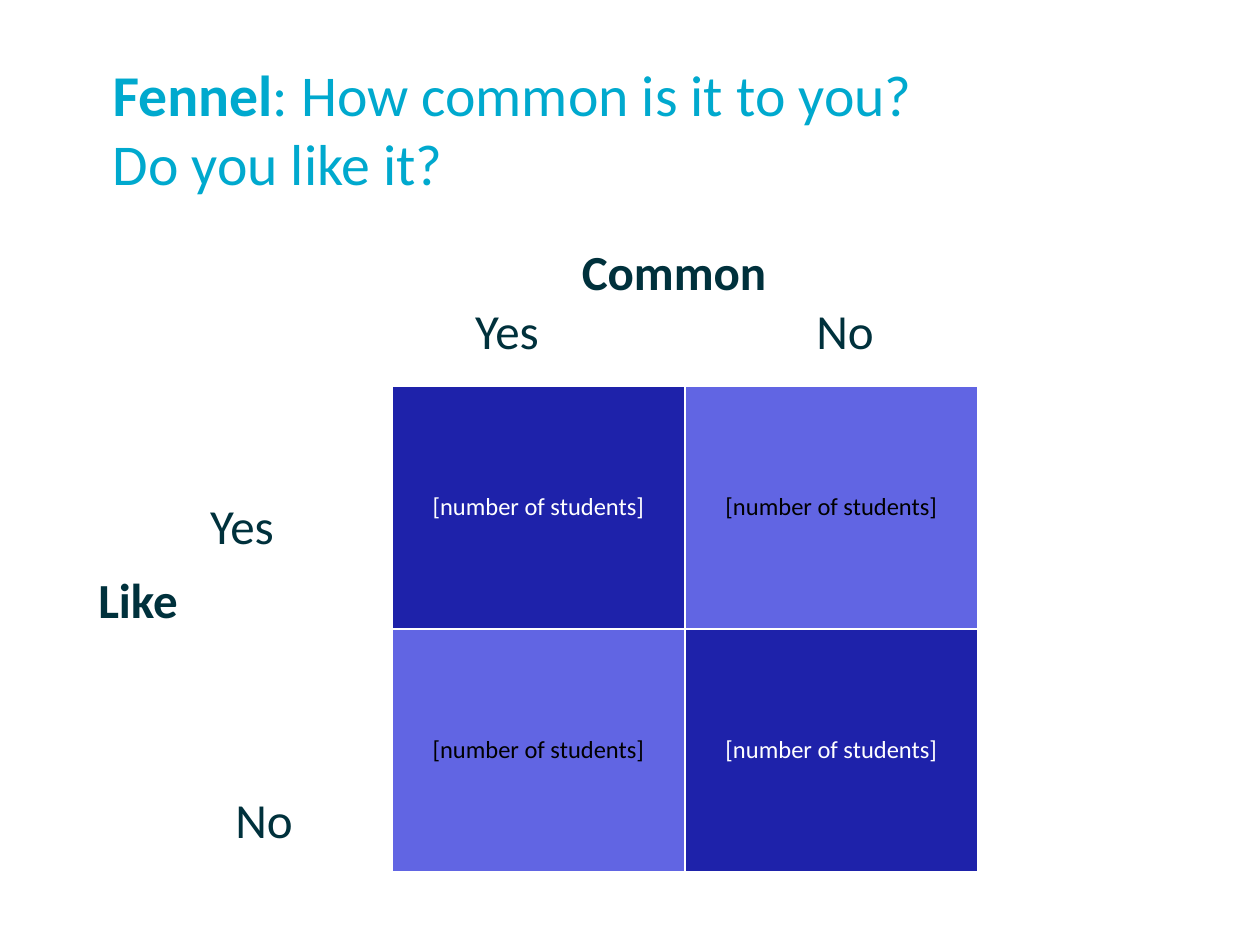
import dataclasses

import pptx
import pptx.dml.color
import pptx.enum.text
import pptx.oxml.ns
import pptx.util
from lxml import etree

EMU_PER_PX = 914400 / 126
ALIGN = pptx.enum.text.PP_ALIGN
ANCHOR = pptx.enum.text.MSO_ANCHOR


@dataclasses.dataclass(frozen=True)
class Theme:
    font: str = "Calibri"
    title_color: str = "00A9CE"
    label_color: str = "00313C"
    dark_fill: str = "1E22AA"
    light_fill: str = "6165E3"
    on_dark: str = "FFFFFF"
    on_light: str = "000000"
    border: str = "FFFFFF"
    title_size: int = 33
    label_size: int = 28
    cell_size: int = 14


def px(length):
    return pptx.util.Emu(round(length * EMU_PER_PX))


def rgb(value):
    return pptx.dml.color.RGBColor.from_string(value)


class SlideBuilder:
    def __init__(self, slide, theme):
        self.slide = slide
        self.theme = theme

    def style_run(self, run, size, color, bold=False):
        run.font.name = self.theme.font
        run.font.size = pptx.util.Pt(size)
        run.font.color.rgb = rgb(color)
        run.font.bold = bold

    def title(self, topic, question, left, top, width, height):
        heading = self.slide.shapes.title
        heading.left, heading.top = px(left), px(top)
        heading.width, heading.height = px(width), px(height)
        frame = heading.text_frame
        frame.auto_size = pptx.enum.text.MSO_AUTO_SIZE.NONE
        frame.word_wrap = True
        frame.vertical_anchor = ANCHOR.MIDDLE
        frame.text = topic
        paragraph = frame.paragraphs[0]
        paragraph.alignment = ALIGN.LEFT
        paragraph.add_run().text = question
        for run, bold in zip(paragraph.runs, (True, False)):
            self.style_run(run, self.theme.title_size, self.theme.title_color, bold)

    def label(self, text, center_x, top, width, bold=False):
        box = self.slide.shapes.add_textbox(
            px(center_x - width / 2), px(top), px(width), px(72))
        frame = box.text_frame
        frame.word_wrap = True
        frame.text = text
        paragraph = frame.paragraphs[0]
        paragraph.alignment = ALIGN.CENTER
        self.style_run(paragraph.runs[0], self.theme.label_size,
                       self.theme.label_color, bold)

    def cell_borders(self, cell):
        properties = cell._tc.get_or_add_tcPr()
        qn = pptx.oxml.ns.qn
        for position, side in enumerate(("a:lnL", "a:lnR", "a:lnT", "a:lnB")):
            line = etree.Element(qn(side), w=str(pptx.util.Pt(1)))
            fill = etree.SubElement(line, qn("a:solidFill"))
            etree.SubElement(fill, qn("a:srgbClr"), val=self.theme.border)
            properties.insert(position, line)

    def checker_table(self, text, size, left, top, width, height):
        table = self.slide.shapes.add_table(
            size, size, px(left), px(top), px(width), px(height)).table
        table.first_row = table.horz_banding = False
        for row in range(size):
            for column in range(size):
                cell = table.cell(row, column)
                dark = (row + column) % 2 == 0
                cell.fill.solid()
                cell.fill.fore_color.rgb = rgb(
                    self.theme.dark_fill if dark else self.theme.light_fill)
                cell.vertical_anchor = ANCHOR.MIDDLE
                cell.text_frame.text = text
                paragraph = cell.text_frame.paragraphs[0]
                paragraph.alignment = ALIGN.CENTER
                color = self.theme.on_dark if dark else self.theme.on_light
                self.style_run(paragraph.runs[0], self.theme.cell_size, color)
                self.cell_borders(cell)


def main():
    deck = pptx.Presentation()
    deck.slide_width, deck.slide_height = px(1260), px(945)
    title_only = deck.slide_layouts[5]
    builder = SlideBuilder(deck.slides.add_slide(title_only), Theme())

    # Question
    builder.title("Fennel", ": How common is it to you? Do you like it?",
                  100, 49, 874, 158)

    # Answer grid
    builder.checker_table("[number of students]", 2, 392, 386, 586, 486)

    # Column axis
    builder.label("Common", 674, 235, 605, bold=True)
    for answer, center_x in (("Yes", 507), ("No", 845)):
        builder.label(answer, center_x, 294, 136)

    # Row axis
    builder.label("Like", 138, 563, 106, bold=True)
    for answer, center_x, top in (("Yes", 242, 489), ("No", 264, 783)):
        builder.label(answer, center_x, top, 136)

    deck.save("out.pptx")


if __name__ == "__main__":
    main()
